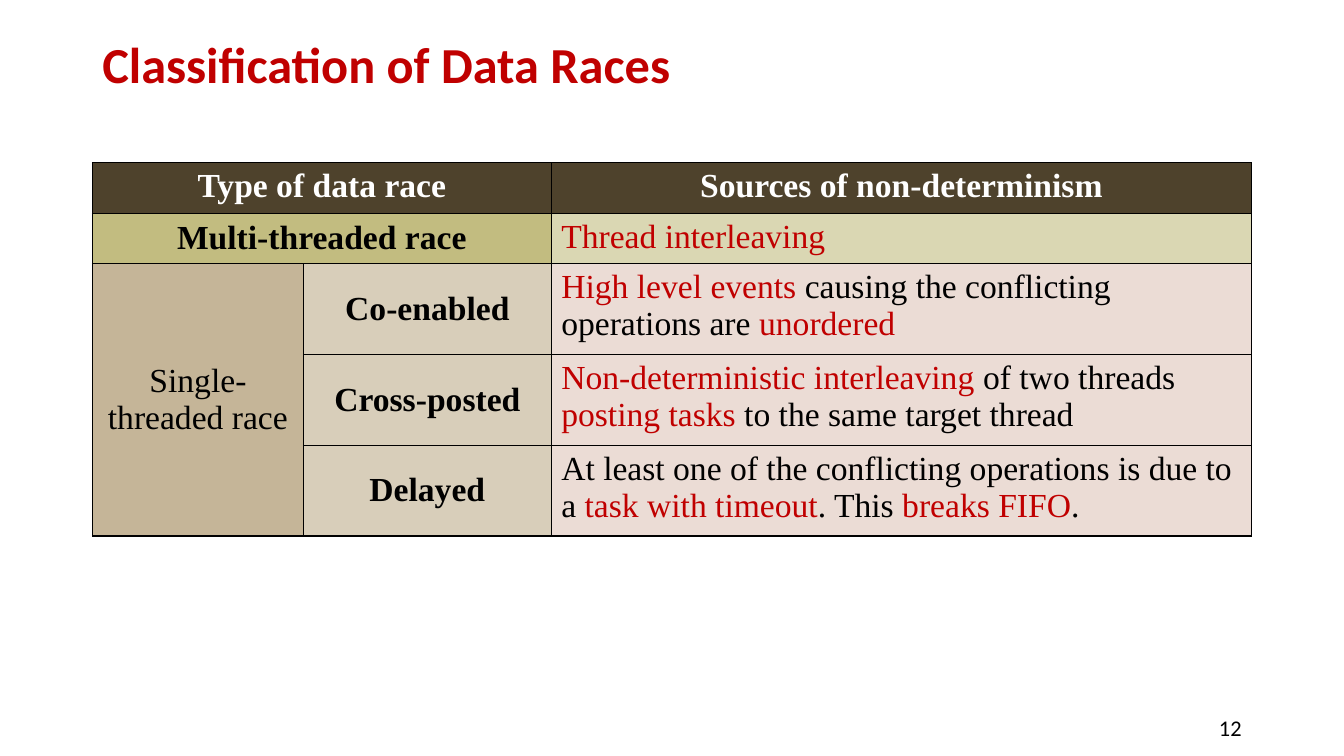
"""Builds the slide that classifies data races in a table."""
import pptx
import pptx.util
import pptx.dml.color
import pptx.enum.text
import pptx.oxml
import pptx.oxml.ns

PX = 9525
THEME = {
    "red": "C00000", "black": "000000", "white": "FFFFFF",
    "header": "4E422C", "multi": "C2BC80", "multi source": "DAD7B3",
    "single": "C5B598", "subtype": "D8CEBA", "single source": "EBDCD5",
    "title font": "Calibri", "table font": "Times New Roman",
    "title size": 36, "table size": 24, "number size": 16,
}
ALIGN = pptx.enum.text.PP_ALIGN
MIDDLE = pptx.enum.text.MSO_ANCHOR.MIDDLE
TOP = pptx.enum.text.MSO_ANCHOR.TOP


def rgb(name):
    return pptx.dml.color.RGBColor.from_string(THEME[name])


def write(paragraph, pieces, role, bold, align):
    paragraph.alignment = align
    paragraph.font.name = THEME[role + " font"]
    paragraph.font.size = pptx.util.Pt(THEME[role + " size"])
    paragraph.font.bold = bold
    for words, color in pieces:
        run = paragraph.add_run()
        run.text = words
        run.font.color.rgb = rgb(color)


THEME["number font"] = THEME["title font"]
deck = pptx.Presentation()
deck.slide_width, deck.slide_height = 1280 * PX, 720 * PX
slide = deck.slides.add_slide(deck.slide_layouts[6])

for words, role, color, bold, align, box in [
    ("Classification of Data Races", "title", "red", True, ALIGN.LEFT, (88, 14, 1104, 100)),
    ("12", "number", "black", False, ALIGN.RIGHT, (904, 679, 288, 27)),
]:
    frame = slide.shapes.add_textbox(*[length * PX for length in box]).text_frame
    frame.word_wrap = True
    frame.vertical_anchor = MIDDLE
    write(frame.paragraphs[0], [(words, color)], role, bold, align)
    frame.paragraphs[0].line_spacing = 0.9 if role == "title" else 1.0

column_widths = [201, 236, 667]
row_heights = [45, 45, 80, 80, 80]
races = slide.shapes.add_table(
    len(row_heights), len(column_widths),
    88 * PX, 155 * PX, sum(column_widths) * PX, sum(row_heights) * PX,
).table
for column, width in zip(races.columns, column_widths):
    column.width = width * PX
for row, height in zip(races.rows, row_heights):
    row.height = height * PX

row_fills = [
    ("header", "header", "header"),
    ("multi", "multi", "multi source"),
] + [("single", "subtype", "single source")] * 3
for row, fills in enumerate(row_fills):
    for column, fill in enumerate(fills):
        cell = races.cell(row, column)
        cell.fill.solid()
        cell.fill.fore_color.rgb = rgb(fill)
        properties = cell._tc.get_or_add_tcPr()
        for place, side in enumerate("LRTB"):
            properties.insert(place, pptx.oxml.parse_xml(
                f'<a:ln{side} {pptx.oxml.ns.nsdecls("a")} w="12700"><a:solidFill>'
                f'<a:srgbClr val="{THEME["black"]}"/></a:solidFill></a:ln{side}>'))

for first, last in [((0, 0), (0, 1)), ((1, 0), (1, 1)), ((2, 0), (4, 0))]:
    races.cell(*first).merge(races.cell(*last))

labels = [
    (0, 0, "Type of data race", "white", True, TOP),
    (0, 2, "Sources of non-determinism", "white", True, TOP),
    (1, 0, "Multi-threaded race", "black", True, MIDDLE),
    (2, 0, "Single-threaded race", "black", False, MIDDLE),
    (2, 1, "Co-enabled", "black", True, MIDDLE),
    (3, 1, "Cross-posted", "black", True, MIDDLE),
    (4, 1, "Delayed", "black", True, MIDDLE),
]
for row, column, words, color, bold, anchor in labels:
    cell = races.cell(row, column)
    cell.vertical_anchor = anchor
    write(cell.text_frame.paragraphs[0], [(words, color)], "table", bold, ALIGN.CENTER)

sources = [
    [("Thread interleaving", "red")],
    [("High level events ", "red"),
     ("causing the conflicting operations are ", "black"),
     ("unordered", "red")],
    [("Non-deterministic interleaving ", "red"), ("of two threads ", "black"),
     ("posting tasks", "red"), (" to the same target thread", "black")],
    [("At least one of the conflicting operations is due to a ", "black"),
     ("task with timeout", "red"), (". This ", "black"),
     ("breaks FIFO", "red"), (".", "black")],
]
for row, pieces in enumerate(sources, start=1):
    source = races.cell(row, 2).text_frame.paragraphs[0]
    write(source, pieces, "table", False, ALIGN.LEFT)

deck.save("out.pptx")
